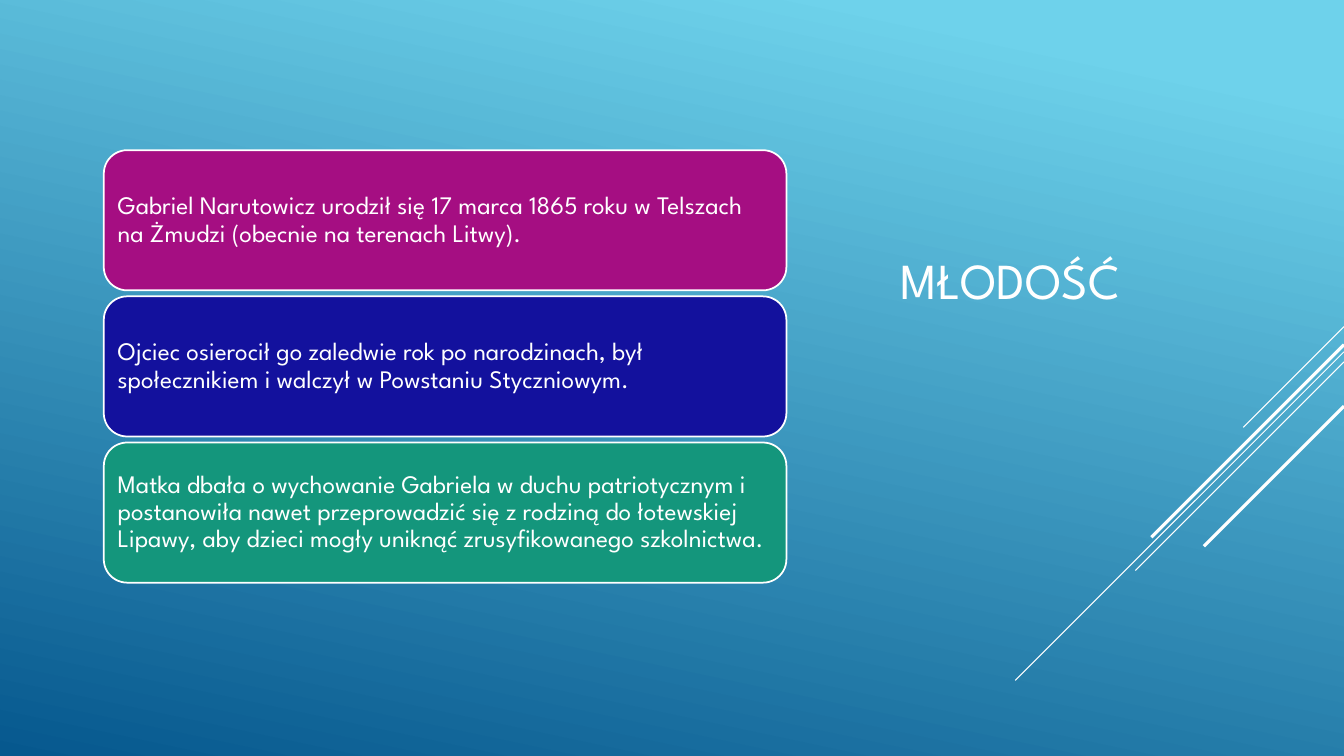
"""Build the slide about the youth of Gabriel Narutowicz."""
from lxml.etree import SubElement
from pptx import Presentation
from pptx.dml.color import RGBColor
from pptx.enum.shapes import MSO_CONNECTOR as CONNECTOR, MSO_SHAPE as SHAPE
from pptx.enum.text import MSO_ANCHOR as ANCHOR, PP_ALIGN as ALIGN
from pptx.oxml.ns import qn
from pptx.util import Inches, Pt

WHITE = RGBColor(0xFF, 0xFF, 0xFF)
SKY = RGBColor(0x6E, 0xD2, 0xEB)
DEEP_BLUE = RGBColor(0x06, 0x58, 0x8E)
MAGENTA = RGBColor(0xA5, 0x0E, 0x82)
NAVY = RGBColor(0x13, 0x11, 0x9D)
GREEN = RGBColor(0x14, 0x96, 0x7C)
FONT = "League Spartan"
WIDTH, HEIGHT = 13.33, 7.5

HEADING = "MŁODOŚĆ"
FACTS = [
    ("Gabriel Narutowicz urodził się 17 marca 1865 roku w Telszach na Żmudzi "
     "(obecnie na terenach Litwy).", MAGENTA),
    ("Ojciec osierocił go zaledwie rok po narodzinach, był społecznikiem i "
     "walczył w Powstaniu Styczniowym.", NAVY),
    ("Matka dbała o wychowanie Gabriela w duchu patriotycznym i postanowiła "
     "nawet przeprowadzić się z rodziną do łotewskiej Lipawy, aby dzieci mogły "
     "uniknąć zrusyfikowanego szkolnictwa.", GREEN),
]
CARD_LEFT, CARD_TOP, CARD_WIDTH, CARD_HEIGHT = 1.03, 1.49, 6.77, 1.39
CARD_STEP, CARD_INSET = 1.45, 0.07
# (top at the right edge, diagonal run, weight)
STREAKS = [(3.24, 1, 0.75), (3.49, 3.26, 0.75), (3.59, 2.07, 0.75),
           (3.42, 1.91, 2.25), (4.03, 1.39, 2.25)]


def write(frame, text, size):
    frame.word_wrap = True
    frame.vertical_anchor = ANCHOR.MIDDLE
    paragraph = frame.paragraphs[0]
    paragraph.alignment = ALIGN.LEFT
    paragraph.line_spacing = 0.9
    run = paragraph.add_run()
    run.text = text
    run.font.name = FONT
    run.font.size = Pt(size)
    run.font.color.rgb = WHITE


def add_backdrop(shapes):
    backdrop = shapes.add_shape(SHAPE.RECTANGLE, 0, 0, Inches(WIDTH), Inches(HEIGHT))
    backdrop.shadow.inherit = False
    backdrop.line.fill.background()
    backdrop.fill.gradient()
    backdrop.fill.gradient_angle = 258
    for stop, color, position in zip(backdrop.fill.gradient_stops, (SKY, DEEP_BLUE), (0.1, 1)):
        stop.color.rgb = color
        stop.position = position


def add_streak(shapes, top, run, weight):
    streak = shapes.add_connector(CONNECTOR.STRAIGHT, Inches(WIDTH), Inches(top),
                                  Inches(WIDTH - run), Inches(top + run))
    streak.line.color.rgb = WHITE
    streak.line.width = Pt(weight)
    SubElement(streak.line._get_or_add_ln().getparent(), qn("a:effectLst"))


def add_card(shapes, row, text, color):
    card = shapes.add_shape(SHAPE.ROUNDED_RECTANGLE, Inches(CARD_LEFT),
                            Inches(CARD_TOP + row * CARD_STEP),
                            Inches(CARD_WIDTH), Inches(CARD_HEIGHT))
    card.shadow.inherit = False
    card.fill.solid()
    card.fill.fore_color.rgb = color
    card.line.color.rgb = WHITE
    card.line.width = Pt(1.25)
    frame = card.text_frame
    frame.margin_left = frame.margin_right = Inches(CARD_INSET)
    frame.margin_top = frame.margin_bottom = Inches(CARD_INSET)
    write(frame, text, 18)


def main():
    deck = Presentation()
    deck.slide_width, deck.slide_height = Inches(WIDTH), Inches(HEIGHT)
    shapes = deck.slides.add_slide(deck.slide_layouts[6]).shapes
    add_backdrop(shapes)
    for streak in STREAKS:
        add_streak(shapes, *streak)
    heading = shapes.add_textbox(Inches(8.83), Inches(1.03), Inches(3.89), Inches(3.55))
    write(heading.text_frame, HEADING, 36)
    for row, (text, color) in enumerate(FACTS):
        add_card(shapes, row, text, color)
    deck.save("out.pptx")


if __name__ == "__main__":
    main()
